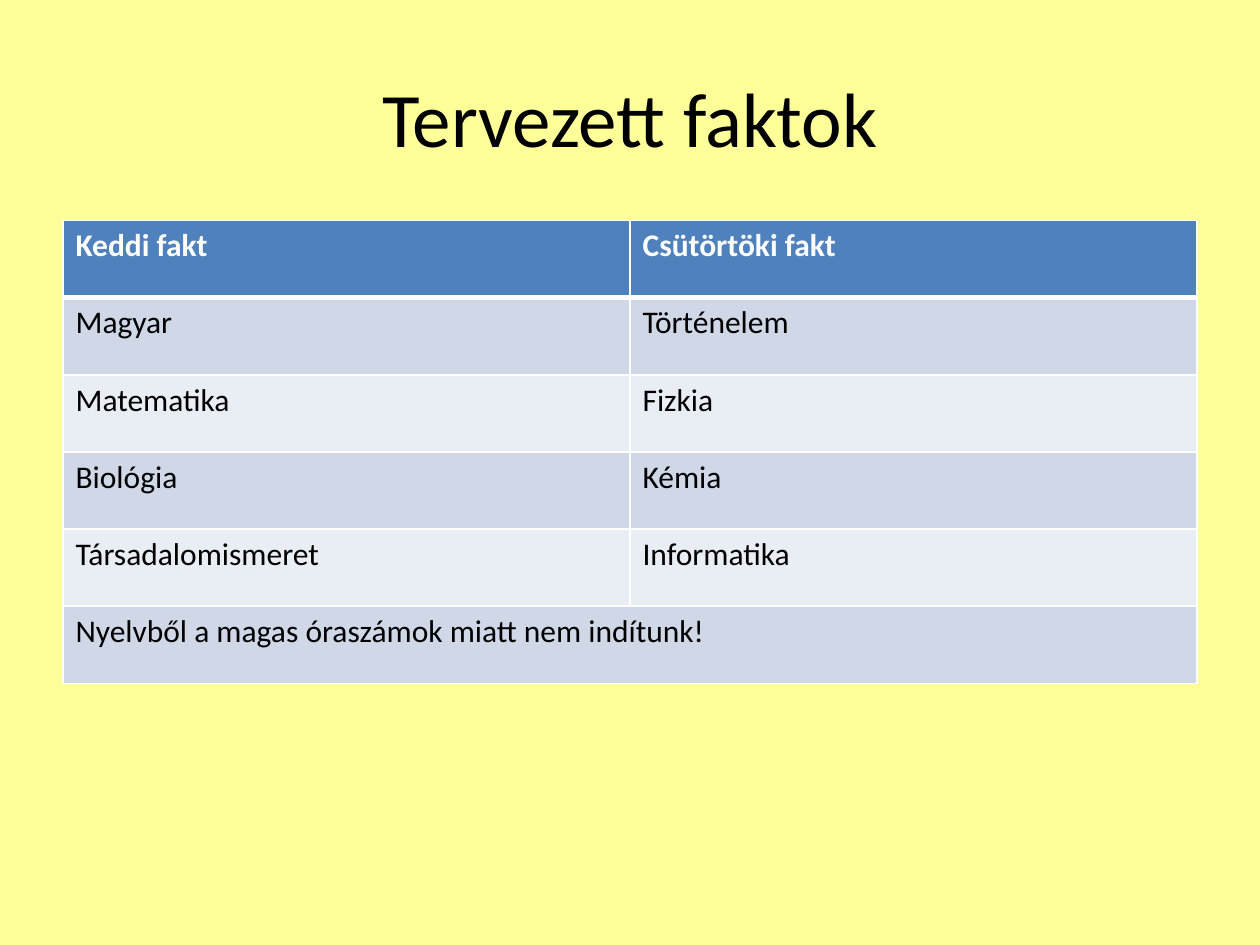
import dataclasses

import lxml.etree
import pptx
import pptx.dml.color
import pptx.enum.text
import pptx.oxml.ns
import pptx.util


@dataclasses.dataclass(frozen=True)
class Theme:
    font: str = "Calibri"
    title_size: int = 44
    body_size: int = 18
    background: str = "FFFF99"
    text: str = "000000"
    header_text: str = "FFFFFF"
    header_fill: str = "4F81BD"
    band_fills: tuple = ("D0D8E8", "E9EDF4")
    border: str = "FFFFFF"
    border_width: int = 1
    header_rule_width: int = 3


@dataclasses.dataclass(frozen=True)
class Box:
    left: int
    top: int
    width: int
    height: int


THEME = Theme()
SLIDE_WIDTH = pptx.util.Inches(10)
SLIDE_HEIGHT = pptx.util.Inches(7.5)
TITLE = "Tervezett faktok"
ROWS = [
    ("Keddi fakt", "Csütörtöki fakt"),
    ("Magyar", "Történelem"),
    ("Matematika", "Fizkia"),
    ("Biológia", "Kémia"),
    ("Társadalomismeret", "Informatika"),
    ("Nyelvből a magas óraszámok miatt nem indítunk!",),
]


def rgb(color):
    return pptx.dml.color.RGBColor.from_string(color)


def share_box(left, top, width, height):
    """Turn shares of the slide's size into a box."""
    return Box(
        round(left * SLIDE_WIDTH),
        round(top * SLIDE_HEIGHT),
        round(width * SLIDE_WIDTH),
        round(height * SLIDE_HEIGHT),
    )


def set_text(text_frame, text, size, color, bold=False):
    text_frame.text = text
    font = text_frame.paragraphs[0].runs[0].font
    font.name = THEME.font
    font.size = pptx.util.Pt(size)
    font.bold = bold
    font.color.rgb = rgb(color)


def set_borders(cell, top_width, bottom_width):
    """Draw all four cell edges; must run before the cell's fill is set."""
    properties = cell._tc.get_or_add_tcPr()
    widths = {
        "lnL": THEME.border_width,
        "lnR": THEME.border_width,
        "lnT": top_width,
        "lnB": bottom_width,
    }
    for edge, width in widths.items():
        line = lxml.etree.SubElement(
            properties, pptx.oxml.ns.qn(f"a:{edge}"), w=str(pptx.util.Pt(width))
        )
        fill = lxml.etree.SubElement(line, pptx.oxml.ns.qn("a:solidFill"))
        lxml.etree.SubElement(fill, pptx.oxml.ns.qn("a:srgbClr"), val=THEME.border)


def add_title(slide, box):
    shape = slide.shapes.add_textbox(box.left, box.top, box.width, box.height)
    text_frame = shape.text_frame
    text_frame.word_wrap = True
    text_frame.vertical_anchor = pptx.enum.text.MSO_ANCHOR.MIDDLE
    set_text(text_frame, TITLE, THEME.title_size, THEME.text)
    text_frame.paragraphs[0].alignment = pptx.enum.text.PP_ALIGN.CENTER


def style_cell(cell, row):
    is_header = row == 0
    set_borders(
        cell,
        THEME.header_rule_width if row == 1 else THEME.border_width,
        THEME.header_rule_width if is_header else THEME.border_width,
    )
    cell.fill.solid()
    band = THEME.band_fills[(row - 1) % len(THEME.band_fills)]
    cell.fill.fore_color.rgb = rgb(THEME.header_fill if is_header else band)


def add_course_table(slide, box):
    """Fill the box with equal rows; a row with one text spans all columns."""
    column_count = len(ROWS[0])
    table = slide.shapes.add_table(
        len(ROWS), column_count, box.left, box.top, box.width, box.height
    ).table
    for row, texts in enumerate(ROWS):
        for column in range(column_count):
            style_cell(table.cell(row, column), row)
        for column, text in enumerate(texts):
            set_text(
                table.cell(row, column).text_frame,
                text,
                THEME.body_size,
                THEME.header_text if row == 0 else THEME.text,
                bold=row == 0,
            )
        if len(texts) < column_count:
            table.cell(row, 0).merge(table.cell(row, column_count - 1))


def main():
    presentation = pptx.Presentation()
    presentation.slide_width = SLIDE_WIDTH
    presentation.slide_height = SLIDE_HEIGHT
    slide = presentation.slides.add_slide(presentation.slide_layouts[6])
    slide.background.fill.solid()
    slide.background.fill.fore_color.rgb = rgb(THEME.background)
    add_title(slide, share_box(0.05, 0.04, 0.9, 1 / 6))
    add_course_table(slide, share_box(0.05, 7 / 30, 0.9, 0.49))
    presentation.save("out.pptx")


if __name__ == "__main__":
    main()
